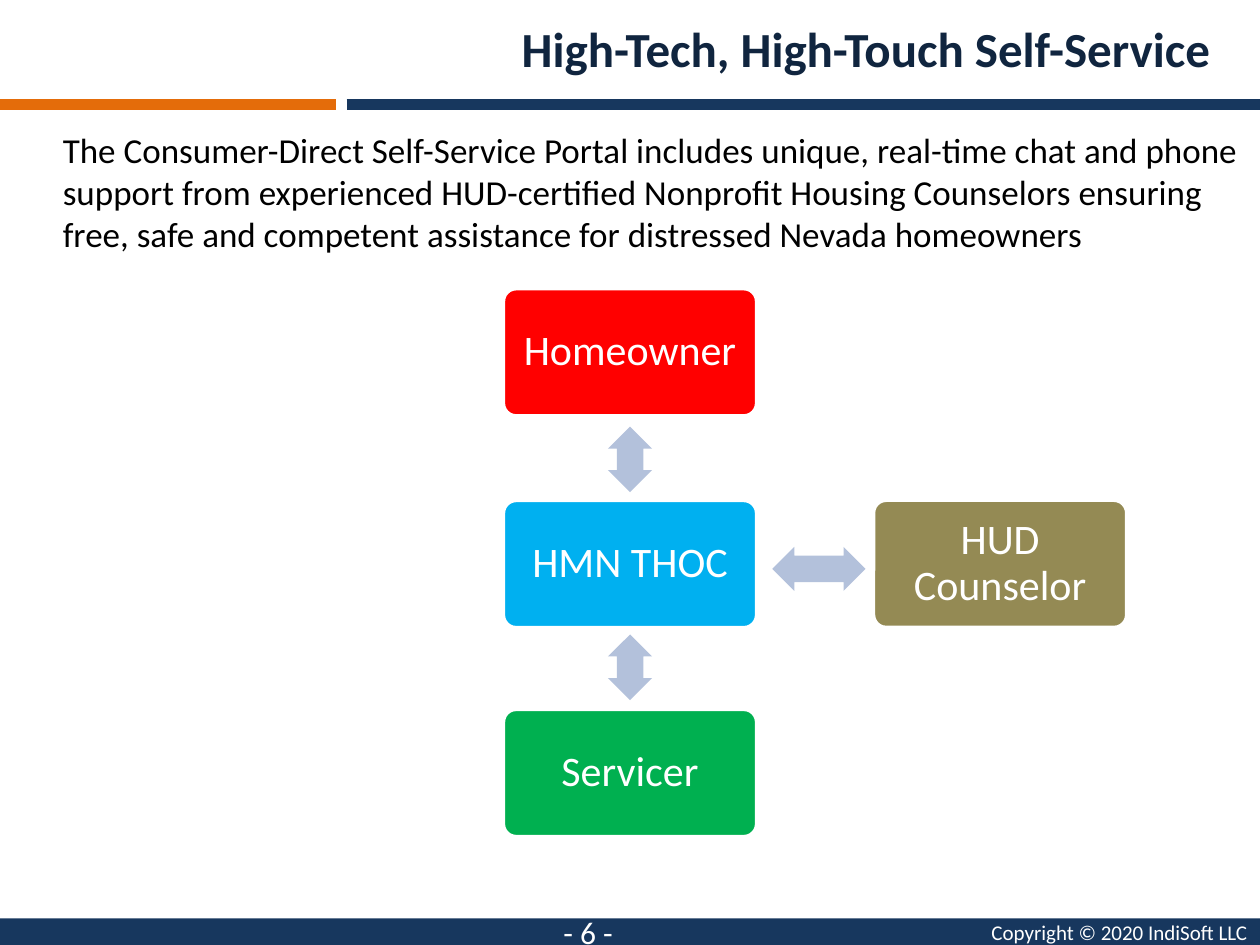
from lxml.etree import SubElement
from pptx import Presentation
from pptx.dml.color import RGBColor
from pptx.enum.shapes import MSO_CONNECTOR, MSO_SHAPE
from pptx.enum.text import MSO_ANCHOR, PP_ALIGN
from pptx.oxml.ns import qn
from pptx.util import Pt

# Content
TITLE = "High-Tech, High-Touch Self-Service"
BODY = ("The Consumer-Direct Self-Service Portal includes unique, real-time chat "
        "and phone support from experienced HUD-certified Nonprofit Housing "
        "Counselors ensuring free, safe and competent assistance for distressed "
        "Nevada homeowners")
COPYRIGHT = "Copyright © 2020 IndiSoft LLC"
PAGE_NUMBER = "- 6 -"

COLORS = {
    "navy": "17375E", "orange": "E46C0A", "title": "10253F",
    "black": "000000", "white": "FFFFFF", "arrow": "B3C1DB",
    "red": "FF0000", "blue": "00B0F0", "green": "00B050", "olive": "948A54",
}

# Label, colour, centre x, centre y
PARTIES = [
    ("Homeowner", "red", 360, 201.3),
    ("HMN THOC", "blue", 360, 322.3),
    ("Servicer", "green", 360, 441.7),
    ("HUD Counselor", "olive", 571.5, 322.2),
]
# Centre x, centre y, length, rotation
ARROWS = [
    (360, 262.5, 37.5, 90),
    (360, 381.3, 37.5, 90),
    (468, 325.1, 53.3, 0),
]
# Start x, end x, colour
RULES = [(198, 720, "navy"), (0, 192, "orange")]

PARTY_WIDTH, PARTY_HEIGHT = 144.7, 72.7
ARROW_THICKNESS = 25.2
RULE_TOP = 59.8
FOOTER_TOP, FOOTER_HEIGHT = 525, 15


def color(name):
    return RGBColor.from_string(COLORS[name])


def write(shape, text, size, ink, align, anchor=MSO_ANCHOR.TOP, bold=False):
    frame = shape.text_frame
    frame.word_wrap = True
    frame.vertical_anchor = anchor
    frame.text = text
    para = frame.paragraphs[0]
    para.alignment = align
    span = para.runs[0]
    span.font.name = "Calibri"
    span.font.size = Pt(size)
    span.font.bold = bold
    span.font.color.rgb = color(ink)
    return para


def add_text(page, area, *style, **options):
    box = page.shapes.add_textbox(*map(Pt, area))
    write(box, *style, **options)


def add_centered(page, kind, x, y, width, height, fill):
    shape = page.shapes.add_shape(
        kind, Pt(x - width / 2), Pt(y - height / 2), Pt(width), Pt(height))
    shape.shadow.inherit = False
    shape.fill.solid()
    shape.fill.fore_color.rgb = color(fill)
    shape.line.fill.background()
    return shape


def main():
    deck = Presentation()
    deck.slide_width, deck.slide_height = Pt(720), Pt(540)
    page = deck.slides.add_slide(deck.slide_layouts[6])

    # Footer band and header rules
    add_centered(page, MSO_SHAPE.RECTANGLE, 360, 533, 720, 16.4, "navy")
    for start, end, ink in RULES:
        rule = page.shapes.add_connector(
            MSO_CONNECTOR.STRAIGHT, Pt(start), Pt(RULE_TOP), Pt(end), Pt(RULE_TOP))
        rule.line.color.rgb = color(ink)
        rule.line.width = Pt(6)
        SubElement(rule._element.spPr, qn("a:effectLst"))

    # Title and body
    add_text(page, (108, 7.2, 590.4, 41), TITLE, 28, "title", PP_ALIGN.RIGHT, bold=True)
    add_text(page, (28.8, 70, 696, 450), BODY, 20, "black", PP_ALIGN.LEFT)

    # Parties
    for label, fill, x, y in PARTIES:
        party = add_centered(page, MSO_SHAPE.ROUNDED_RECTANGLE, x, y,
                             PARTY_WIDTH, PARTY_HEIGHT, fill)
        party.adjustments[0] = 0.1
        party.line.color.rgb = color("white")
        party.line.width = Pt(2)
        para = write(party, label, 24, "white", PP_ALIGN.CENTER, MSO_ANCHOR.MIDDLE)
        para.line_spacing = 0.9

    # Two-way arrows
    for x, y, length, rotation in ARROWS:
        arrow = add_centered(page, MSO_SHAPE.LEFT_RIGHT_ARROW, x, y,
                             length, ARROW_THICKNESS, "arrow")
        arrow.adjustments[0] = 0.6
        arrow.adjustments[1] = 0.5
        arrow.rotation = rotation

    # Footer text
    add_text(page, (462, FOOTER_TOP, 258, FOOTER_HEIGHT), COPYRIGHT, 12, "white",
             PP_ALIGN.RIGHT, MSO_ANCHOR.MIDDLE)
    add_text(page, (252, FOOTER_TOP, 168, FOOTER_HEIGHT), PAGE_NUMBER, 18, "white",
             PP_ALIGN.CENTER, MSO_ANCHOR.MIDDLE)

    deck.save("out.pptx")


if __name__ == "__main__":
    main()
